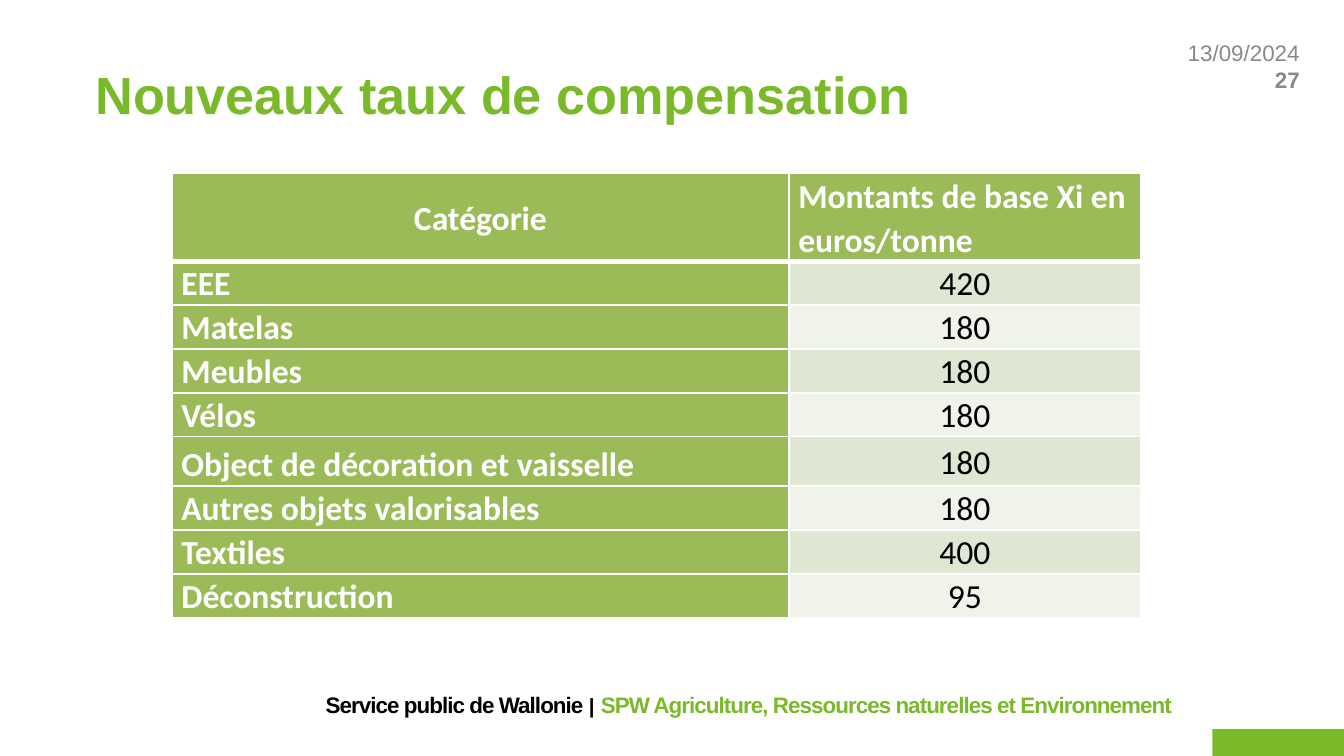
import dataclasses
import pptx
import pptx.dml.color
import pptx.enum.shapes
import pptx.enum.text
import pptx.oxml
import pptx.oxml.ns
import pptx.util

ALIGN = pptx.enum.text.PP_ALIGN
ANCHOR = pptx.enum.text.MSO_ANCHOR


@dataclasses.dataclass(frozen=True)
class Theme:
    """Colours, fonts and type sizes of the slide."""
    green: str = "7AB929"
    head: str = "9BBB59"
    bands: tuple = ("DEE7D1", "EFF3EA")
    white: str = "FFFFFF"
    black: str = "000000"
    grey: str = "898989"
    sans: str = "Arial"
    grid: str = "Calibri"
    title: int = 28
    cell: int = 18
    small: int = 12
    bar: int = 11


THEME = Theme()
WIDE = pptx.util.Inches(10)
HIGH = WIDE * 9 // 16
UNIT = WIDE // 100
ROWS = [
    ("EEE", "420"),
    ("Matelas", "180"),
    ("Meubles", "180"),
    ("Vélos", "180"),
    ("Object de décoration et vaisselle", "180"),
    ("Autres objets valorisables", "180"),
    ("Textiles", "400"),
    ("Déconstruction", "95"),
]


def tint(code):
    """Turn a hex code into a colour."""
    return pptx.dml.color.RGBColor.from_string(code)


def span(*parts):
    """Turn columns and rows of the slide grid into a box of lengths."""
    return [int(part * UNIT) for part in parts]


def add_run(para, text, size, code, bold=False, face=THEME.sans, gap=None):
    """Add one formatted run to a paragraph."""
    run = para.add_run()
    run.text = text
    run.font.size = pptx.util.Pt(size)
    run.font.name = face
    run.font.bold = bold
    run.font.color.rgb = tint(code)
    if gap is not None:
        run.font._element.set("spc", str(gap))


def add_title(slide, box):
    """Place the slide title in its placeholder."""
    title = slide.shapes.title
    title.left, title.top, title.width, title.height = box
    frame = title.text_frame
    frame.vertical_anchor = ANCHOR.MIDDLE
    para = frame.paragraphs[0]
    para.alignment = ALIGN.LEFT
    add_run(para, "Nouveaux taux de compensation", THEME.title, THEME.green, True)


def add_date(slide, box):
    """Place the date above the page number."""
    frame = slide.shapes.add_textbox(*box).text_frame
    frame.word_wrap = True
    first, second = frame.paragraphs[0], frame.add_paragraph()
    first.alignment = second.alignment = ALIGN.RIGHT
    add_run(first, "13/09/2024", THEME.small, THEME.grey)
    add_run(second, "27", THEME.small, THEME.grey, True)


def add_foot(slide, box):
    """Place the footer line."""
    frame = slide.shapes.add_textbox(*box).text_frame
    frame.word_wrap = True
    frame.vertical_anchor = ANCHOR.MIDDLE
    para = frame.paragraphs[0]
    para.alignment = ALIGN.RIGHT
    for text, size, code in (
        ("Service public de Wallonie ", THEME.small, THEME.black),
        ("|", THEME.bar, THEME.black),
        (" ", THEME.small, THEME.black),
        ("SPW Agriculture, Ressources naturelles et Environnement",
         THEME.small, THEME.green),
    ):
        add_run(para, text, size, code, True, gap=-50)


def add_block(slide, box):
    """Place the green corner block."""
    block = slide.shapes.add_shape(pptx.enum.shapes.MSO_SHAPE.RECTANGLE, *box)
    block.shadow.inherit = False
    block.fill.solid()
    block.fill.fore_color.rgb = tint(THEME.green)
    block.line.fill.background()


def set_edge(cell, row):
    """Draw white cell borders, thick below the header row."""
    props = cell._tc.get_or_add_tcPr()
    space = pptx.oxml.ns.nsdecls("a")
    for side in "LRTB":
        thick = (row, side) in ((0, "B"), (1, "T"))
        width = pptx.util.Pt(3 if thick else 1)
        props.append(pptx.oxml.parse_xml(
            f'<a:ln{side} {space} w="{width}"><a:solidFill>'
            f'<a:srgbClr val="{THEME.white}"/></a:solidFill></a:ln{side}>'))


def fill_cell(cell, row, text, align, anchor, back, code, bold):
    """Format one table cell and write its text."""
    set_edge(cell, row)
    cell.fill.solid()
    cell.fill.fore_color.rgb = tint(back)
    cell.margin_left = cell.margin_right = pptx.util.Inches(0.07)
    cell.margin_top = cell.margin_bottom = 0
    cell.vertical_anchor = anchor
    para = cell.text_frame.paragraphs[0]
    para.alignment = align
    para.line_spacing = 1.07
    para.space_after = pptx.util.Pt(6)
    add_run(para, text, THEME.cell, code, bold, THEME.grid)


def add_rates(slide, box):
    """Place the table of rates by category."""
    table = slide.shapes.add_table(len(ROWS) + 1, 2, *box).table
    for col, part in zip(table.columns, span(45.9, 26.2)):
        col.width = part
    for index, row in enumerate(table.rows):
        row.height = pptx.util.Pt({0: 47, 5: 26.5}.get(index, 23.5))
    heads = (("Catégorie", ALIGN.CENTER),
             ("Montants de base Xi en euros/tonne", ALIGN.LEFT))
    for col, (text, align) in enumerate(heads):
        fill_cell(table.cell(0, col), 0, text, align, ANCHOR.MIDDLE,
                  THEME.head, THEME.white, True)
    for row, (name, rate) in enumerate(ROWS, 1):
        fill_cell(table.cell(row, 0), row, name, ALIGN.JUSTIFY, ANCHOR.BOTTOM,
                  THEME.head, THEME.white, True)
        fill_cell(table.cell(row, 1), row, rate, ALIGN.CENTER, ANCHOR.MIDDLE,
                  THEME.bands[(row - 1) % 2], THEME.black, False)


def main():
    """Build and save the slide."""
    deck = pptx.Presentation()
    deck.slide_width = WIDE
    deck.slide_height = HIGH
    slide = deck.slides.add_slide(deck.slide_layouts[5])
    add_date(slide, span(78, 2.4, 19.7, 5.9))
    add_block(slide, span(90.2, 54.25, 9.8, 2))
    add_foot(slide, span(0, 50.9, 88.2, 3))
    add_title(slide, span(6.1, 2.3, 86, 9.4))
    add_rates(slide, span(12.8, 12.9, 72.1, 33))
    deck.save("out.pptx")


if __name__ == "__main__":
    main()
